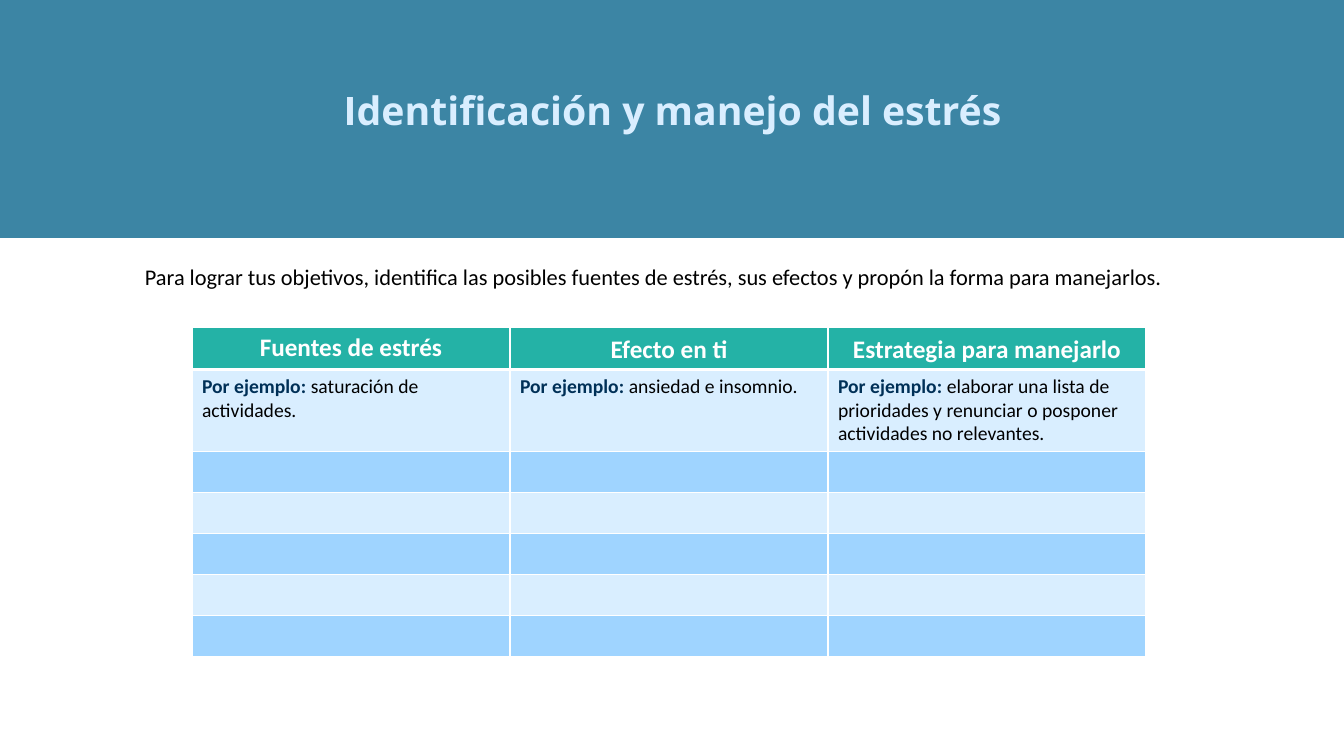
from dataclasses import dataclass

from lxml.etree import SubElement
from pptx import Presentation
from pptx.dml.color import RGBColor
from pptx.enum.shapes import MSO_SHAPE
from pptx.enum.text import MSO_ANCHOR, PP_ALIGN
from pptx.oxml.ns import qn
from pptx.util import Emu, Pt


@dataclass(frozen=True)
class Theme:
    band: str = "3C85A4"
    title: str = "D9EEFF"
    header: str = "24B2A6"
    light_row: str = "D9EEFF"
    dark_row: str = "9FD4FF"
    label: str = "003057"
    body: str = "000000"
    white: str = "FFFFFF"
    title_font: str = "Open Sans"
    body_font: str = "Calibri"
    title_size: int = 28
    header_size: int = 18
    intro_size: int = 16
    example_size: int = 14
    thin: int = 1
    thick: int = 3


THEME = Theme()
EMU_PER_PX = 914400 / 100.8
COLUMN_WIDTH = 318
ROW_HEIGHT = 41
EXAMPLE_HEIGHT = 82
EMPTY_ROWS = 5
HEADERS = ["Fuentes de estrés", "Efecto en ti", "Estrategia para manejarlo"]
EXAMPLES = [
    "saturación de actividades.",
    "ansiedad e insomnio.",
    "elaborar una lista de prioridades y renunciar o posponer actividades no relevantes.",
]


def px(length):
    return Emu(round(length * EMU_PER_PX))


def add_run(paragraph, text, size, color, bold=False, font=THEME.body_font):
    run = paragraph.add_run()
    run.text = text
    run.font.name = font
    run.font.size = Pt(size)
    run.font.bold = bold
    run.font.color.rgb = RGBColor.from_string(color)


def add_band(slide, left, top, width, height):
    band = slide.shapes.add_shape(
        MSO_SHAPE.RECTANGLE, px(left), px(top), px(width), px(height)
    )
    band.shadow.inherit = False
    band.fill.solid()
    band.fill.fore_color.rgb = RGBColor.from_string(THEME.band)
    band.line.fill.background()


def add_text_area(slide, left, top, width, height, anchor=MSO_ANCHOR.TOP):
    area = slide.shapes.add_textbox(px(left), px(top), px(width), px(height))
    area.text_frame.word_wrap = True
    area.text_frame.vertical_anchor = anchor
    return area.text_frame.paragraphs[0]


def style_cell(cell, fill, top=THEME.thin, bottom=THEME.thin):
    properties = cell._tc.get_or_add_tcPr()
    borders = {"L": THEME.thin, "R": THEME.thin, "T": top, "B": bottom}
    for side, weight in borders.items():
        border = SubElement(properties, qn(f"a:ln{side}"), w=str(Pt(weight)))
        stroke = SubElement(border, qn("a:solidFill"))
        SubElement(stroke, qn("a:srgbClr"), val=THEME.white)
    cell.fill.solid()
    cell.fill.fore_color.rgb = RGBColor.from_string(fill)


def add_stress_table(slide, left, top):
    row_heights = [ROW_HEIGHT, EXAMPLE_HEIGHT] + [ROW_HEIGHT] * EMPTY_ROWS
    table = slide.shapes.add_table(
        len(row_heights), len(HEADERS), px(left), px(top),
        px(COLUMN_WIDTH * len(HEADERS)), px(sum(row_heights)),
    ).table
    for column in table.columns:
        column.width = px(COLUMN_WIDTH)
    for index, height in enumerate(row_heights):
        table.rows[index].height = px(height)
        for cell in table.rows[index].cells:
            if index == 0:
                style_cell(cell, THEME.header, bottom=THEME.thick)
            else:
                fill = THEME.light_row if index % 2 else THEME.dark_row
                style_cell(cell, fill, top=THEME.thick if index == 1 else THEME.thin)

    for index, (header, example) in enumerate(zip(HEADERS, EXAMPLES)):
        heading = table.cell(0, index).text_frame.paragraphs[0]
        heading.alignment = PP_ALIGN.CENTER
        if index:
            heading.line_spacing = 1.07
        add_run(heading, header, THEME.header_size, THEME.white, bold=True)
        answer = table.cell(1, index).text_frame.paragraphs[0]
        add_run(answer, "Por ejemplo: ", THEME.example_size, THEME.label, bold=True)
        add_run(answer, example, THEME.example_size, THEME.body)
    table.cell(0, 0).vertical_anchor = MSO_ANCHOR.MIDDLE


def main():
    presentation = Presentation()
    presentation.slide_width = px(1344)
    presentation.slide_height = px(756)
    slide = presentation.slides.add_slide(presentation.slide_layouts[6])

    add_band(slide, 0, 0, 1344, 238)
    title = add_text_area(slide, 93, 40, 1159, 146, MSO_ANCHOR.MIDDLE)
    title.alignment = PP_ALIGN.CENTER
    title.line_spacing = 0.9
    add_run(title, "Identificación y manejo del estrés", THEME.title_size,
            THEME.title, bold=True, font=THEME.title_font)
    intro = add_text_area(slide, 135, 258, 1074, 67)
    add_run(intro, "Para lograr tus objetivos, identifica las posibles fuentes de estrés, "
            "sus efectos y propón la forma para manejarlos.",
            THEME.intro_size, THEME.body)
    add_stress_table(slide, 192, 327)

    presentation.save("out.pptx")


if __name__ == "__main__":
    main()
